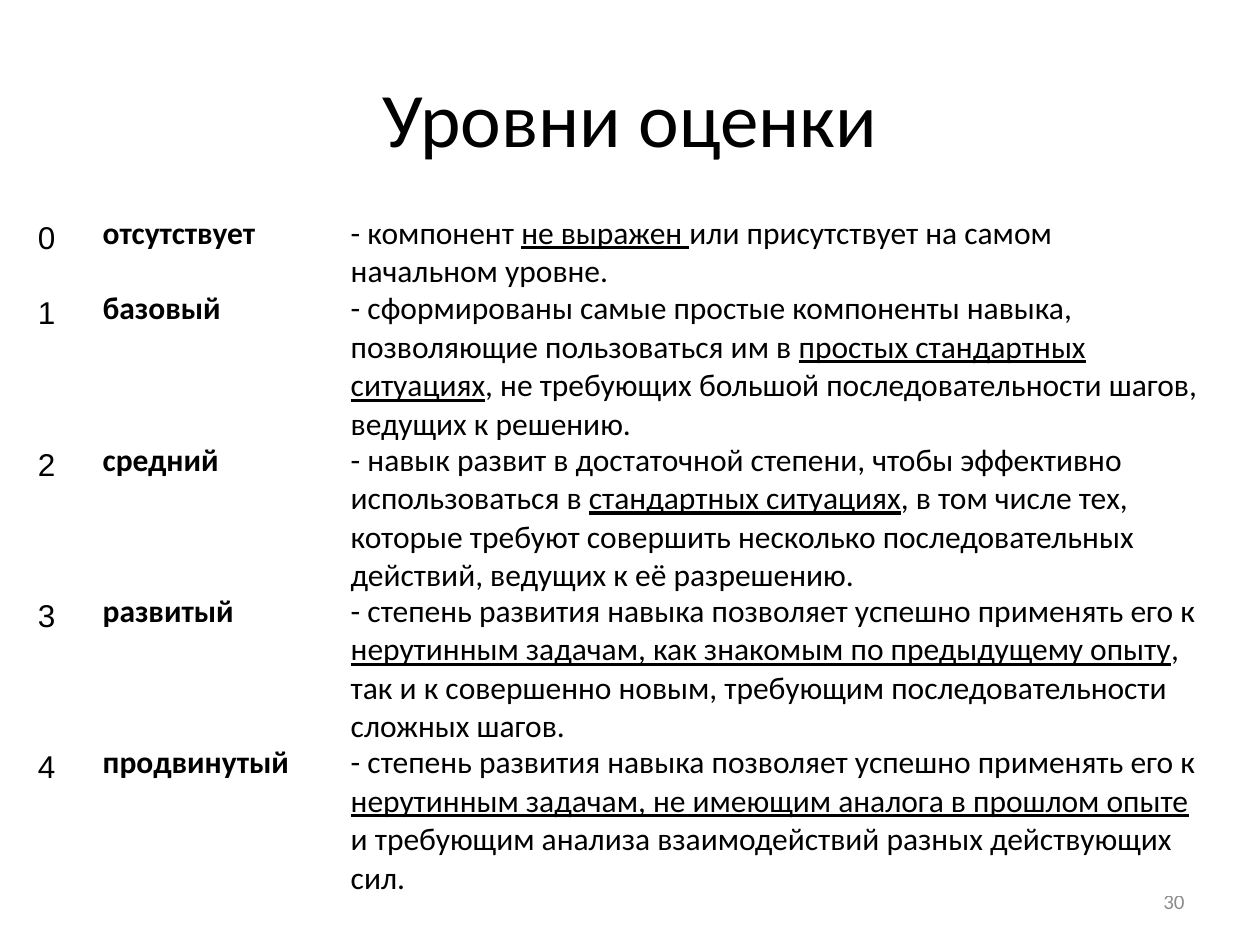
from pptx import Presentation
from pptx.dml.color import RGBColor as Rgb
from pptx.enum.text import MSO_ANCHOR as Anchor, PP_ALIGN as Align
from pptx.util import Cm, Pt

SKILL = "- степень развития навыка позволяет успешно применять его к "

# Level name, then text before, inside and after the underline
LEVELS = [
    ("отсутствует", "- компонент ", "не выражен ",
     "или присутствует на самом начальном уровне."),
    ("базовый",
     "- сформированы самые простые компоненты навыка, "
     "позволяющие пользоваться им в ",
     "простых стандартных ситуациях",
     ", не требующих большой последовательности шагов, ведущих к решению."),
    ("средний",
     "- навык развит в достаточной степени, чтобы эффективно "
     "использоваться в ",
     "стандартных ситуациях",
     ", в том числе тех, которые требуют совершить несколько "
     "последовательных действий, ведущих к её разрешению."),
    ("развитый", SKILL,
     "нерутинным задачам, как знакомым по предыдущему опыту",
     ", так и к совершенно новым, требующим последовательности "
     "сложных шагов."),
    ("продвинутый", SKILL,
     "нерутинным задачам, не имеющим аналога в прошлом опыте ",
     "и требующим анализа взаимодействий разных действующих сил."),
]
WIDTHS = [1.88, 5, 17.6]


def color(code):
    return Rgb.from_string(code)


def style(run, size=18, face="Calibri", code="000000", bold=False, line=False):
    font = run.font
    font.size, font.name = Pt(size), face
    font.bold, font.underline = bold, line
    font.color.rgb = color(code)


def add_text(slide, text, box, align, size, code):
    frame = slide.shapes.add_textbox(*map(Cm, box)).text_frame
    frame.word_wrap = True
    frame.vertical_anchor = Anchor.MIDDLE
    frame.text = text
    par = frame.paragraphs[0]
    par.alignment = align
    style(par.runs[0], size, code=code)


def fill_cell(cell, parts, align=Align.LEFT, tight=True, **look):
    """Write the parts as runs; every second part is underlined."""
    cell.fill.background()
    if tight:
        cell.margin_left = cell.margin_right = Cm(0.19)
        cell.margin_top = cell.margin_bottom = 0
    par = cell.text_frame.paragraphs[0]
    par.alignment = align
    for i, part in enumerate(parts):
        run = par.add_run()
        run.text = part
        style(run, line=i % 2 == 1, **look)


def add_levels(slide):
    rows = len(LEVELS)
    table = slide.shapes.add_table(
        rows, len(WIDTHS), 0, Cm(4.32), Cm(sum(WIDTHS)), Cm(1.04 * rows)).table
    table.first_row = table.horz_banding = False
    for col, width in zip(table.columns, WIDTHS):
        col.width = Cm(width)
    for i, (name, *parts) in enumerate(LEVELS):
        fill_cell(table.cell(i, 0), [str(i)], Align.CENTER, False, face="Arial")
        fill_cell(table.cell(i, 1), [name], bold=True)
        fill_cell(table.cell(i, 2), parts)


def main():
    deck = Presentation()
    deck.slide_width, deck.slide_height = Cm(25.4), Cm(19.05)
    slide = deck.slides.add_slide(deck.slide_layouts[6])

    # Title and page number
    add_text(slide, "Уровни оценки", (1.27, 0.76, 22.86, 3.18),
             Align.CENTER, 44, "000000")
    add_text(slide, "30", (18.2, 17.65, 5.93, 1.02), Align.RIGHT, 12, "8C8C8C")

    # Table of levels
    add_levels(slide)
    deck.save("out.pptx")


if __name__ == "__main__":
    main()
